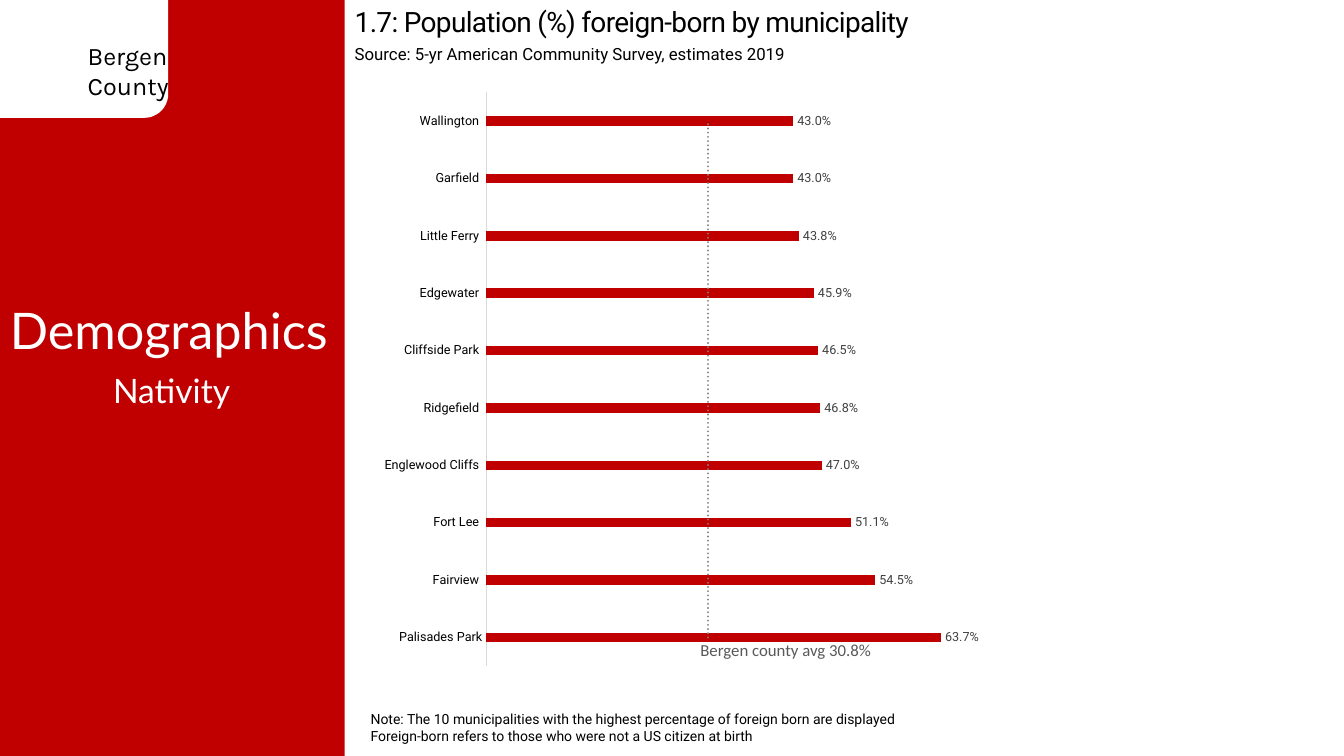
"""Build the Bergen County slide on foreign-born population by municipality."""
from lxml import etree
from pptx import Presentation
from pptx import util as u
from pptx.chart import data as chart_data
from pptx.dml.color import RGBColor
from pptx.enum import chart as charts, shapes, text

RED = RGBColor(0xC0, 0x00, 0x00)
WHITE = RGBColor(0xFF, 0xFF, 0xFF)
BLACK = RGBColor(0x00, 0x00, 0x00)
DARK_GREY = RGBColor(0x40, 0x40, 0x40)
MID_GREY = RGBColor(0x59, 0x59, 0x59)
LIGHT_GREY = RGBColor(0xD9, 0xD9, 0xD9)

LEFT, CENTER = text.PP_ALIGN.LEFT, text.PP_ALIGN.CENTER
PANELS = [
    (shapes.MSO_SHAPE.RECTANGLE, (0, 0, 8.69, 19.05), RED),
    (shapes.MSO_SHAPE.ROUNDED_RECTANGLE, (-0.84, -0.64, 5.08, 3.61), WHITE),
]
TITLE = "1.7: Population (%) foreign-born by municipality"
TEXTS = [
    (["Bergen", "County"], (1.96, 0.89, 2.54, 1.8), "Karla", 18, BLACK, LEFT),
    (["Demographics"], (0, 7.42, 8.69, 1.8), "Lato", 36, WHITE, LEFT),
    ([TITLE], (8.69, 0, 22.86, 1.12), "Roboto", 20, BLACK, LEFT),
    (["Source: 5-yr American Community Survey, estimates 2019"],
     (8.69, 0.99, 17.91, 0.76), "Roboto", 12, BLACK, LEFT),
    (["Note: The 10 municipalities with the highest percentage of foreign born are displayed",
      "Foreign-born refers to those who were not a US citizen at birth"],
     (9.09, 17.78, 24.77, 1.12), "Roboto", 10, BLACK, LEFT),
    (["Nativity"], (0.86, 9.19, 6.93, 1.27), "Lato", 24, WHITE, CENTER),
]
AVERAGE_LABEL = (["Bergen county avg 30.8%"], (17.4, 16, 5.2, 0.84), "Calibri", 12, MID_GREY, LEFT)
CHART_BOX = (9.25, 2.03, 22.58, 15.06)
PLOT_AREA = {"x": 0.133, "y": 0.02, "w": 0.558, "h": 0.96}
FOREIGN_BORN = {
    "Palisades Park": 0.637, "Fairview ": 0.545, "Fort Lee ": 0.511,
    "Englewood Cliffs ": 0.47, "Ridgefield ": 0.468, "Cliffside Park ": 0.465,
    "Edgewater ": 0.459, "Little Ferry ": 0.438, "Garfield ": 0.43, "Wallington ": 0.43,
}
COUNTY_AVERAGE = 0.31

C = "http://schemas.openxmlformats.org/drawingml/2006/chart"
A = "http://schemas.openxmlformats.org/drawingml/2006/main"
TRENDLINE = f"""<c:trendline xmlns:c="{C}" xmlns:a="{A}">
<c:spPr><a:ln w="19050" cap="rnd"><a:solidFill><a:srgbClr val="808080"/></a:solidFill>
<a:prstDash val="sysDot"/></a:ln></c:spPr><c:trendlineType val="linear"/>
<c:dispRSqr val="0"/><c:dispEq val="0"/></c:trendline>"""


def lengths(box):
    return [u.Cm(value) for value in box]


def set_font(font, name, size, color):
    for key, value in {"name": name, "size": u.Pt(size)}.items():
        setattr(font, key, value)
    font.color.rgb = color


def add_panel(slide, kind, box, color):
    shape = slide.shapes.add_shape(kind, *lengths(box))
    shape.shadow.inherit = False
    shape.fill.solid()
    shape.fill.fore_color.rgb = color
    shape.line.fill.background()


def add_text(slide, lines, box, name, size, color, alignment):
    frame = slide.shapes.add_textbox(*lengths(box)).text_frame
    frame.word_wrap = True
    for index, line in enumerate(lines):
        paragraph = frame.add_paragraph() if index else frame.paragraphs[0]
        paragraph.alignment = alignment
        run = paragraph.add_run()
        run.text = line
        set_font(run.font, name, size, color)
        if line == TITLE:
            run._r.get_or_add_rPr().set("spc", "-50")


def set_plot_area(chart):
    plot_area = chart._chartSpace.chart.plotArea
    for old in plot_area.findall(f"{{{C}}}layout"):
        plot_area.remove(old)
    layout = etree.Element(f"{{{C}}}layout")
    manual = etree.SubElement(layout, f"{{{C}}}manualLayout")
    settings = {"layoutTarget": "inner", "xMode": "edge", "yMode": "edge", **PLOT_AREA}
    for tag, value in settings.items():
        etree.SubElement(manual, f"{{{C}}}{tag}").set("val", str(value))
    plot_area.insert(0, layout)


def add_chart(slide):
    data = chart_data.CategoryChartData(number_format="0.00%")
    data.categories = list(FOREIGN_BORN)
    data.add_series("% Foreign Born", list(FOREIGN_BORN.values()))
    data.add_series("Series 2", [COUNTY_AVERAGE] * len(FOREIGN_BORN))
    chart = slide.shapes.add_chart(
        charts.XL_CHART_TYPE.BAR_CLUSTERED, *lengths(CHART_BOX), data).chart
    chart.has_legend = chart.has_title = False
    set_font(chart.font, "Calibri", 10, BLACK)
    set_plot_area(chart)

    plot = chart.plots[0]
    for key, value in {"gap_width": 500, "overlap": 100, "vary_by_categories": False}.items():
        setattr(plot, key, value)

    municipalities, average = plot.series
    municipalities.format.fill.solid()
    municipalities.format.fill.fore_color.rgb = RED
    labels = municipalities.data_labels
    label_format = {"show_value": True, "number_format": "0.0%", "number_format_is_linked": False,
                    "position": charts.XL_LABEL_POSITION.OUTSIDE_END}
    for key, value in label_format.items():
        setattr(labels, key, value)
    set_font(labels.font, "Roboto", 9, DARK_GREY)

    average.format.fill.background()
    average.format.line.fill.background()
    average._element.find(f"{{{C}}}cat").addprevious(etree.fromstring(TRENDLINE))

    category_axis, value_axis = chart.category_axis, chart.value_axis
    category_axis.major_tick_mark = charts.XL_TICK_MARK.NONE
    category_axis.format.line.color.rgb = LIGHT_GREY
    category_axis.format.line.width = u.Pt(0.75)
    set_font(category_axis.tick_labels.font, "Roboto", 9, BLACK)
    value_format = {"visible": False, "has_major_gridlines": False,
                    "minimum_scale": 0, "maximum_scale": 0.7}
    for key, value in value_format.items():
        setattr(value_axis, key, value)


def main():
    presentation = Presentation()
    presentation.slide_width, presentation.slide_height = lengths((33.87, 19.05))
    slide = presentation.slides.add_slide(presentation.slide_layouts[6])
    for panel in PANELS:
        add_panel(slide, *panel)
    for entry in TEXTS:
        add_text(slide, *entry)
    add_chart(slide)
    add_text(slide, *AVERAGE_LABEL)
    presentation.save("out.pptx")


if __name__ == "__main__":
    main()
